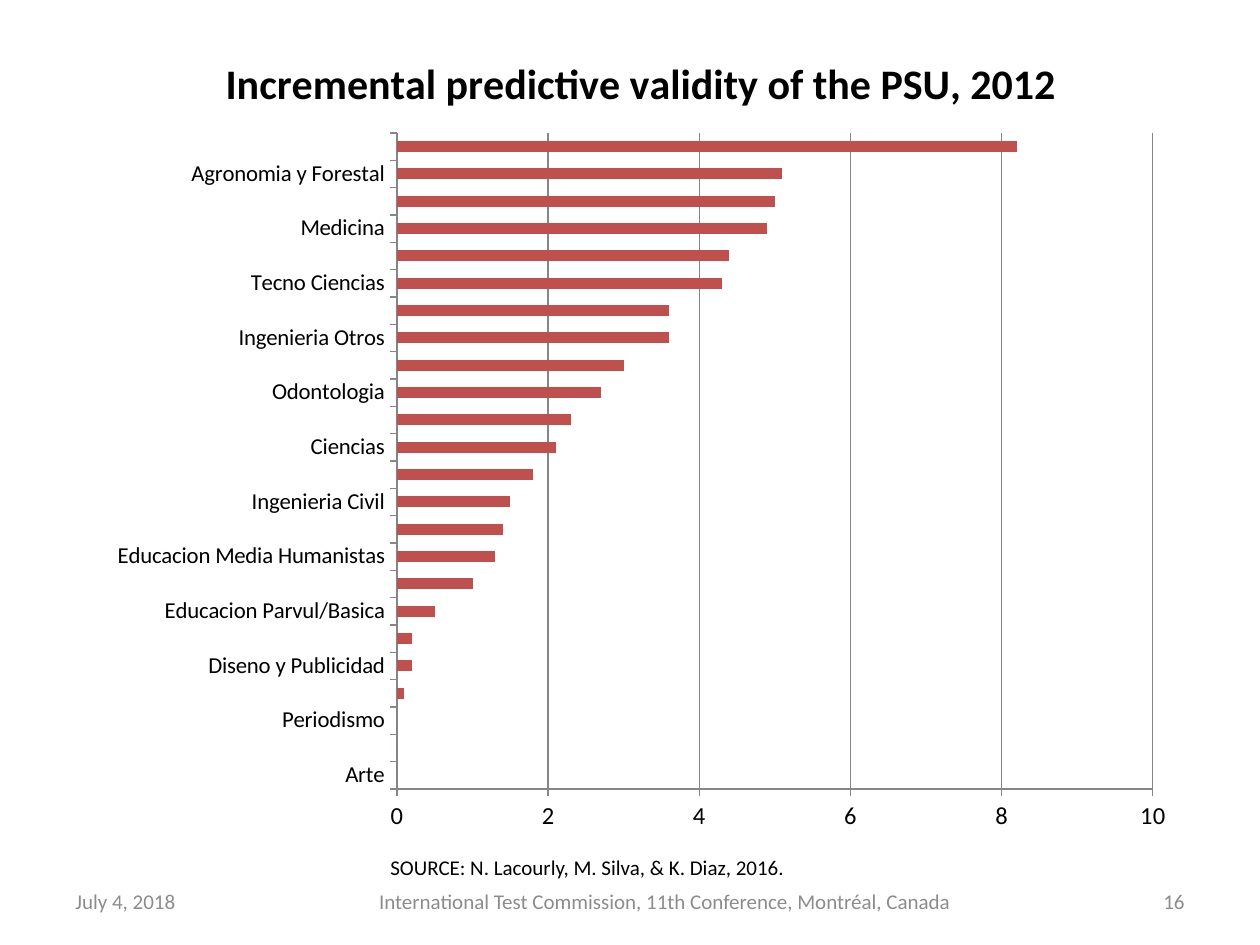
from lxml.etree import SubElement
from pptx import Presentation
from pptx.chart.data import CategoryChartData
from pptx.dml.color import RGBColor
from pptx.enum.chart import XL_CHART_TYPE, XL_TICK_MARK
from pptx.enum.text import MSO_ANCHOR, PP_ALIGN
from pptx.oxml.ns import qn
from pptx.util import Pt

TITLE = "Incremental predictive validity of the PSU, 2012"
DATA = [
    ("Arte", 0, 0),
    ("Periodismo", 0, 0.1),
    ("Diseno y Publicidad", 0.2, 0.2),
    ("Educacion Parvul/Basica", 0.5, 1),
    ("Educacion Media Humanistas", 1.3, 1.4),
    ("Ingenieria Civil", 1.5, 1.8),
    ("Ciencias", 2.1, 2.3),
    ("Odontologia", 2.7, 3),
    ("Ingenieria Otros", 3.6, 3.6),
    ("Tecno Ciencias", 4.3, 4.4),
    ("Medicina", 4.9, 5),
    ("Agronomia y Forestal", 5.1, 8.2),
]
COLORS = {"text": "000000", "foot": "8C8C8C", "bar": "C0504D", "line": "868686"}
FONT = "Calibri"
NOTES = [
    ("SOURCE: N. Lacourly, M. Silva, & K. Diaz, 2016.",
     (378, 848, 489, 38), "text", PP_ALIGN.LEFT, MSO_ANCHOR.TOP),
    ("International Test Commission, 11th Conference, Montréal, Canada",
     (324, 876, 682, 50), "foot", PP_ALIGN.CENTER, MSO_ANCHOR.MIDDLE),
    ("16", (1092, 876, 105, 50), "foot", PP_ALIGN.RIGHT, MSO_ANCHOR.MIDDLE),
    ("July 4, 2018", (63, 876, 165, 50), "foot", PP_ALIGN.LEFT, MSO_ANCHOR.MIDDLE),
]
CHART = (96, 30, 1091, 818)
PLOT = (397, 133, 756, 656)
HEAD = (218, 47)
SCALE = 914400 / 126


def emu(*px):
    return [round(n * SCALE) for n in px]


def color(key):
    return RGBColor.from_string(COLORS[key])


def style(font, size, key="text", bold=False):
    font.name, font.size, font.bold = FONT, Pt(size), bold
    font.color.rgb = color(key)


def place(node, index, box, inner=False):
    for old in node.findall(qn("c:layout")):
        node.remove(old)
    layout = SubElement(node, qn("c:layout"))
    node.insert(index, layout)
    manual = SubElement(layout, qn("c:manualLayout"))
    left, top, width, height = CHART
    parts = [("layoutTarget", "inner")] if inner else []
    parts += [("xMode", "edge"), ("yMode", "edge")]
    shares = (box[0] - left) / width, (box[1] - top) / height
    shares += tuple(n / full for n, full in zip(box[2:], (width, height)))
    parts += [(name, f"{n:.4f}") for name, n in zip("xywh", shares)]
    for name, val in parts:
        SubElement(manual, qn("c:" + name)).set("val", val)


def add_bars(slide):
    data = CategoryChartData()
    data.categories = [label for name, *_ in DATA for label in (name, "")]
    data.add_series("Series 1", [val for _, *pair in DATA for val in pair])
    chart = slide.shapes.add_chart(
        XL_CHART_TYPE.BAR_STACKED, *emu(*CHART), data).chart
    style(chart.font, 10)
    chart.has_legend = False
    chart.has_title = True
    title = chart.chart_title
    title.text_frame.text = TITLE
    style(title.text_frame.paragraphs[0].runs[0].font, 24, bold=True)
    title.include_in_layout = False
    place(title._element, 1, HEAD)

    plot = chart.plots[0]
    plot.gap_width, plot.overlap, plot.vary_by_categories = 150, 100, False
    fill = plot.series[0].format.fill
    fill.solid()
    fill.fore_color.rgb = color("bar")

    cat, val = chart.category_axis, chart.value_axis
    for axis, size in ((cat, 13), (val, 14)):
        style(axis.tick_labels.font, size)
        axis.major_tick_mark = XL_TICK_MARK.OUTSIDE
        axis.minor_tick_mark = XL_TICK_MARK.NONE
        axis.format.line.color.rgb = color("line")
    cat.has_major_gridlines = False
    val.has_major_gridlines = True
    val.major_gridlines.format.line.color.rgb = color("line")
    val.minimum_scale, val.maximum_scale, val.major_unit = 0, 10, 2
    val.tick_labels.number_format = "General"
    val.tick_labels.number_format_is_linked = False
    place(chart._chartSpace.chart.plotArea, 0, PLOT, inner=True)


def add_note(slide, text, box, key, align, anchor):
    frame = slide.shapes.add_textbox(*emu(*box)).text_frame
    frame.word_wrap = True
    frame.vertical_anchor = anchor
    frame.text = text
    para = frame.paragraphs[0]
    para.alignment = align
    style(para.runs[0].font, 12, key)


def main():
    deck = Presentation()
    deck.slide_width, deck.slide_height = emu(1260, 945)
    slide = deck.slides.add_slide(deck.slide_layouts[6])
    add_bars(slide)
    for note in NOTES:
        add_note(slide, *note)
    deck.save("out.pptx")


if __name__ == "__main__":
    main()
